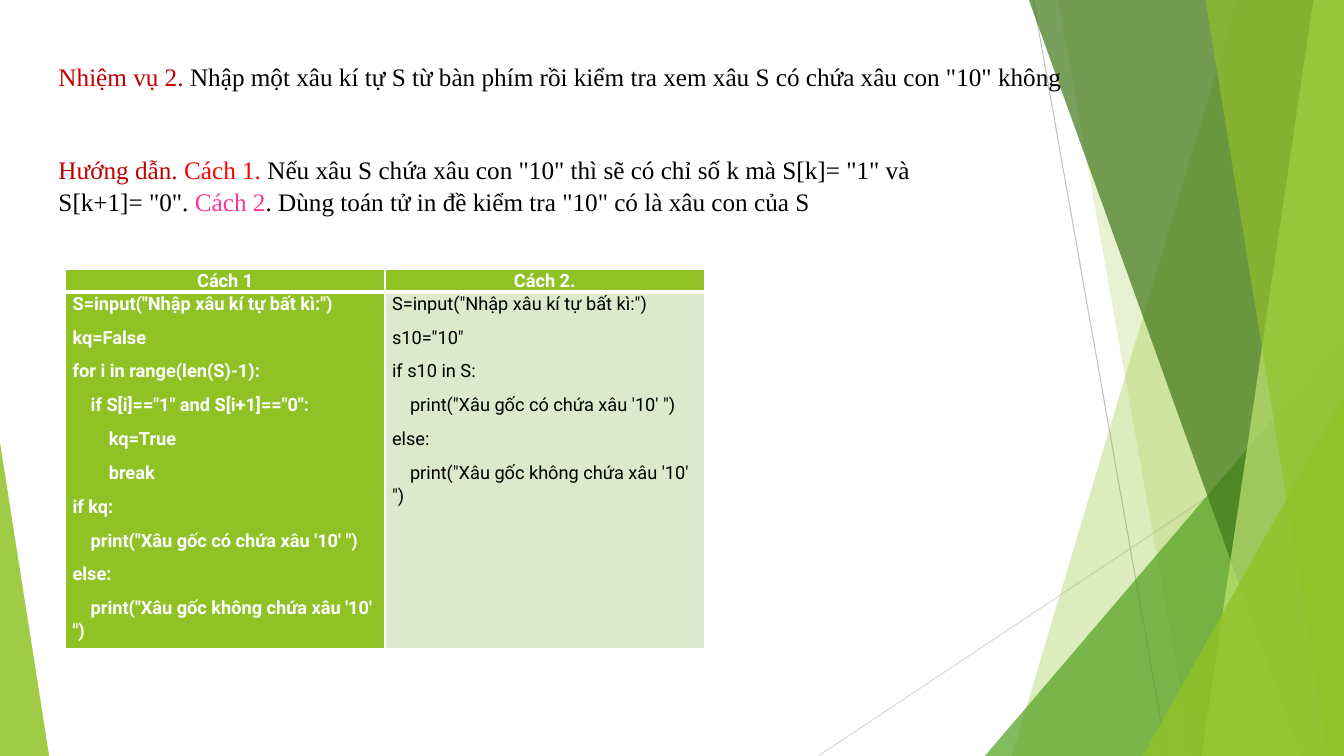
from lxml import etree
from pptx import Presentation
from pptx.dml.color import RGBColor
from pptx.enum.shapes import MSO_CONNECTOR, MSO_SHAPE
from pptx.enum.text import MSO_ANCHOR, MSO_AUTO_SIZE, PP_ALIGN
from pptx.oxml.ns import qn
from pptx.util import Cm, Pt

LINE = MSO_CONNECTOR.STRAIGHT
TRIANGLE = MSO_SHAPE.ISOSCELES_TRIANGLE
TOP = MSO_ANCHOR.TOP
FIXED = MSO_AUTO_SIZE.NONE
LEFT, CENTER = PP_ALIGN.LEFT, PP_ALIGN.CENTER

WIDE, HIGH = 33.87, 19.05
GREEN, PALE = "90C226", "DBE9CD"
BLACK, WHITE = "000000", "FFFFFF"

TASK = [
    ("Nhiệm vụ 2. ", "C00000"),
    ('Nhập một xâu kí tự S từ bàn phím rồi kiểm tra xem xâu S có chứa xâu con "10" không', BLACK),
]
GUIDE = [
    ("Hướng dẫn. ", "C00000"),
    ("Cách 1. ", "FF0000"),
    ('Nếu xâu S chứa xâu con "10" thì sẽ có chỉ số k mà S[k]= "1" và S[k+1]= "0". ', BLACK),
    ("Cách 2", "FF3399"),
    (". Dùng toán tử in đề kiểm tra \"10\" có là xâu con của S", BLACK),
]
LOOP = """S=input("Nhập xâu kí tự bất kì:")
kq=False
for i in range(len(S)-1):
    if S[i]=="1" and S[i+1]=="0":
        kq=True
        break
if kq:
    print("Xâu gốc có chứa xâu '10' ")
else:
    print("Xâu gốc không chứa xâu '10' ")"""
TEST = """S=input("Nhập xâu kí tự bất kì:")
s10="10"
if s10 in S:
    print("Xâu gốc có chứa xâu '10' ")
else:
    print("Xâu gốc không chứa xâu '10' ")"""


def paint(fill, color, alpha=100):
    """Fill with a hex colour at an opacity given in percent."""
    fill.solid()
    fill.fore_color.rgb = RGBColor.from_string(color)
    if alpha < 100:
        tone = fill._xPr.find(qn("a:solidFill"))[0]
        etree.SubElement(tone, qn("a:alpha"), val=str(alpha * 1000))


class Page:
    serif, sans = "Times New Roman", "Roboto"

    def __init__(self, deck):
        self.slide = deck.slides.add_slide(deck.slide_layouts[1])
        self.shapes = self.slide.shapes

    def line(self, x1, y1, x2, y2, color):
        line = self.shapes.add_connector(LINE, Cm(x1), Cm(y1), Cm(x2), Cm(y2))
        paint(line.line.fill, color)
        line.line.width = Pt(0.75)
        etree.SubElement(line._element.spPr, qn("a:effectLst"))

    def finish(self, shape, color, alpha):
        shape.shadow.inherit = False
        paint(shape.fill, color, alpha)
        shape.line.fill.background()

    def band(self, top, foot, color, alpha):
        """Draw a slanted band that reaches the right edge of the slide."""
        pen = self.shapes.build_freeform(Cm(top), 0)
        pen.add_line_segments(
            [(Cm(x), Cm(y)) for x, y in ((WIDE, 0), (WIDE, HIGH), (foot, HIGH))])
        self.finish(pen.convert_to_shape(), color, alpha)

    def wedge(self, x, y, wide, tip, color, alpha):
        """Draw a triangle that stands on the bottom edge of the slide."""
        shape = self.shapes.add_shape(TRIANGLE, Cm(x), Cm(y), Cm(wide), Cm(HIGH - y))
        shape.adjustments[0] = tip
        self.finish(shape, color, alpha)

    def style(self, para, name, size, align=LEFT):
        para.alignment = align
        para.line_spacing = 1.07
        para.space_before = Pt(0)
        para.space_after = Pt(8)
        para.font.name = name
        para.font.size = Pt(size)

    def text(self, holder, x, y, wide, high, parts):
        """Place a placeholder above the bands and fill it with coloured parts."""
        self.shapes._spTree.append(holder._element)
        holder.left, holder.top, holder.width, holder.height = map(Cm, (x, y, wide, high))
        frame = holder.text_frame
        frame.word_wrap, frame.auto_size = True, FIXED
        frame.vertical_anchor = TOP
        para = frame.paragraphs[0]
        props = para._p.get_or_add_pPr()
        props.set("marL", "0")
        props.set("indent", "0")
        etree.SubElement(props, qn("a:buNone"))
        self.style(para, self.serif, 18)
        for words, color in parts:
            run = para.add_run()
            run.text = words
            run.font.name, run.font.size = self.serif, Pt(18)
            paint(run.font.fill, color)

    def cell(self, cell, words, fill, color, bold, align, foot):
        cell.text = words
        cell.margin_left = cell.margin_right = Cm(0.18)
        cell.margin_top = cell.margin_bottom = 0
        paint(cell.fill, fill)
        for para in cell.text_frame.paragraphs:
            self.style(para, self.sans, 13, align)
            for run in para.runs:
                run.font.name, run.font.size = self.sans, Pt(13)
                run.font.bold = bold
                paint(run.font.fill, color)
        props = cell._tc.get_or_add_tcPr()
        for spot, (side, width) in enumerate(zip("LRTB", (1, 1, 1, foot))):
            edge = etree.Element(qn("a:ln" + side), w=str(Pt(width)))
            tint = etree.SubElement(edge, qn("a:solidFill"))
            etree.SubElement(tint, qn("a:srgbClr"), val=WHITE)
            props.insert(spot, edge)

    def table(self, x, y, wide, highs, heads, codes):
        frame = self.shapes.add_table(2, 2, Cm(x), Cm(y), Cm(wide), Cm(sum(highs)))
        grid = frame.table
        for row, high in zip(grid.rows, highs):
            row.height = Cm(high)
        looks = ((GREEN, WHITE, True), (PALE, BLACK, False))
        for col, (head, code, look) in enumerate(zip(heads, codes, looks)):
            self.cell(grid.cell(0, col), head, GREEN, WHITE, True, CENTER, 3)
            self.cell(grid.cell(1, col), code, *look, LEFT, 1)


def main():
    deck = Presentation()
    deck.slide_width, deck.slide_height = Cm(WIDE), Cm(HIGH)
    page = Page(deck)
    page.line(26.04, 0, 29.41, HIGH, "BFBFBF")
    page.line(WIDE, 10.24, 20.62, HIGH, "D9D9D9")
    page.band(31.19, 25.5, GREEN, 30)
    page.band(26.67, 30.05, GREEN, 20)
    page.wedge(24.82, 8.46, 9.05, 1, "54A021", 72)
    page.band(25.93, 32.79, "3F7819", 70)
    page.band(33.1, 30.28, "C0E474", 70)
    page.band(30.38, 33.48, GREEN, 65)
    page.wedge(28.8, 9.98, 5.07, 1, GREEN, 80)
    page.wedge(0, 11.15, 1.24, 0, GREEN, 85)
    page.text(page.shapes.title, 1.22, 1.37, 26.24, 1.04, TASK)
    page.text(page.slide.placeholders[1], 1.22, 3.71, 24.1, 1.85, GUIDE)
    page.table(1.65, 6.78, 16.1, (0.58, 8.99), ("Cách 1", "Cách 2."), (LOOP, TEST))
    deck.save("out.pptx")


if __name__ == "__main__":
    main()
